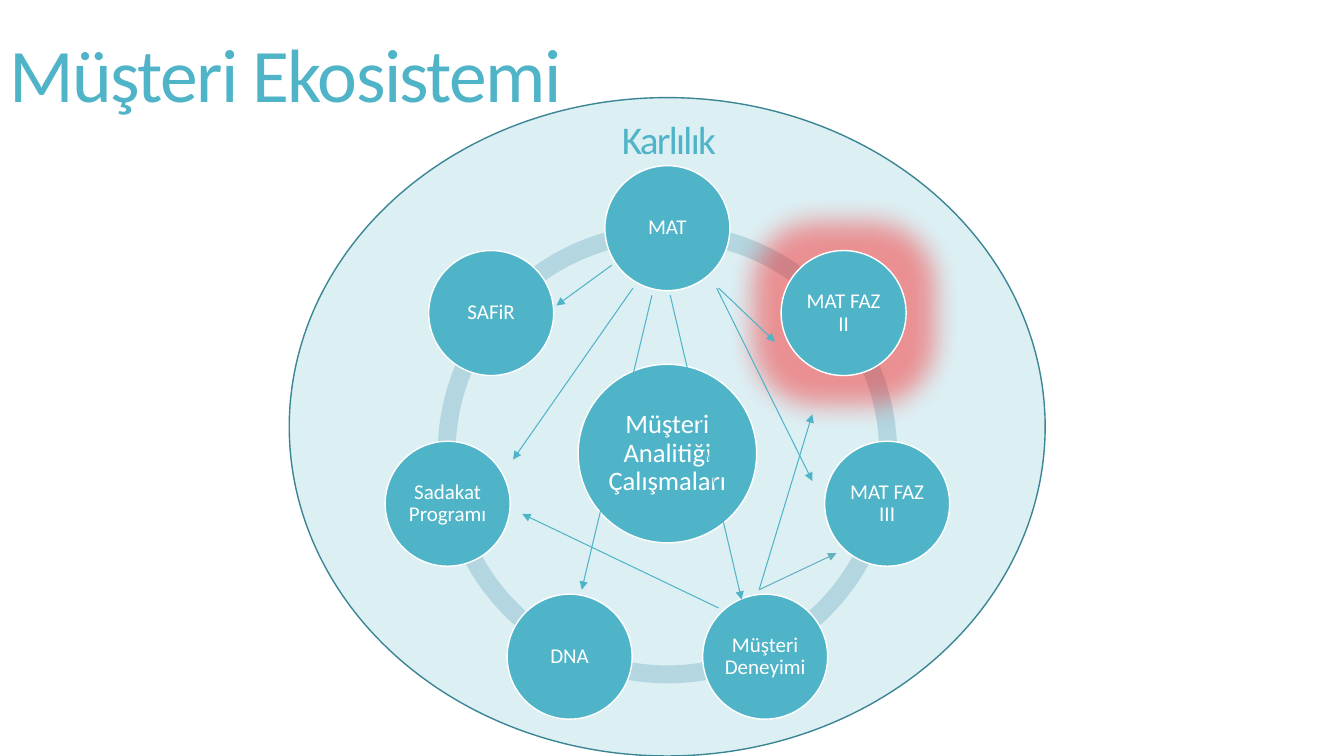
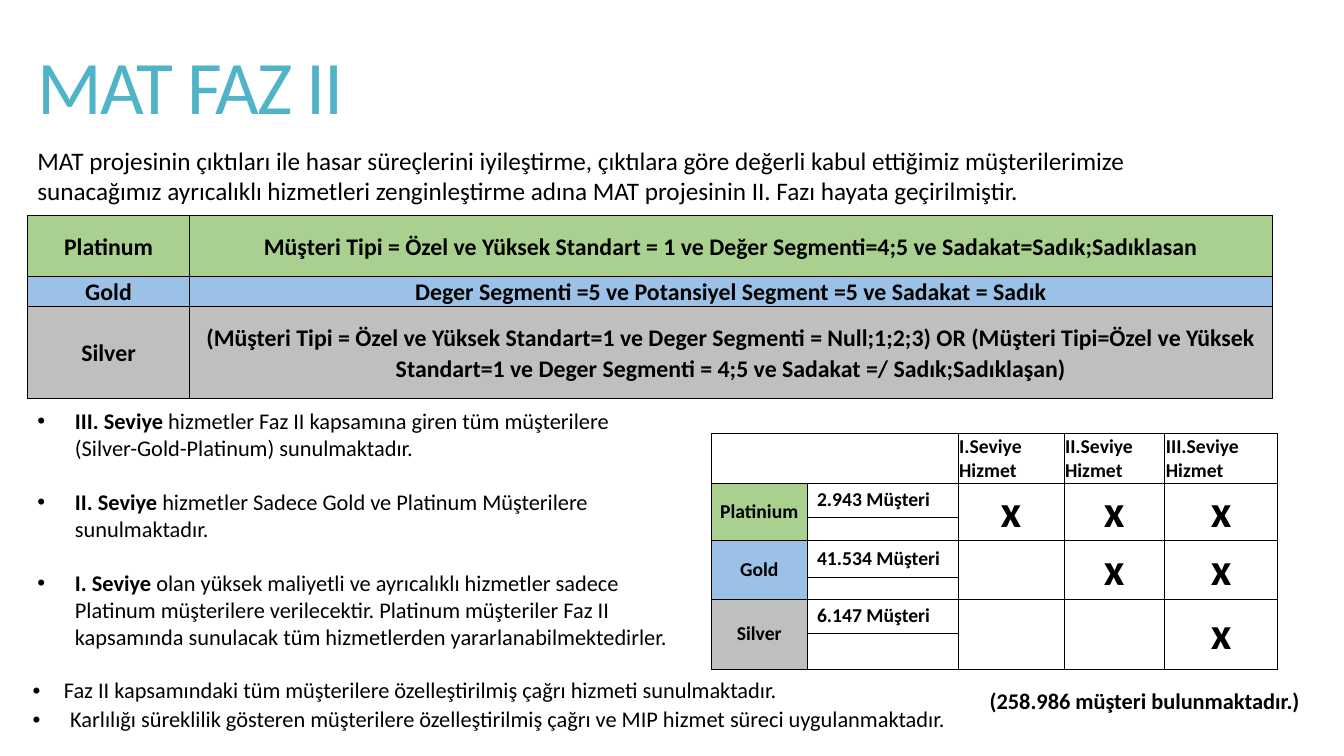
from math import cos, radians, sin

from lxml.etree import SubElement
from pptx import Presentation
from pptx.dml.color import RGBColor
from pptx.enum.shapes import MSO_CONNECTOR, MSO_SHAPE
from pptx.enum.text import MSO_ANCHOR as ANCHOR, PP_ALIGN as ALIGN
from pptx.oxml.ns import qn
from pptx.util import Cm, Pt

COLORS = {
    "teal": "50B4C8",
    "teal_dark": "3B8594",
    "teal_muted": "66B1BD",
    "ring": "B3D6E0",
    "pale": "DCF0F4",
    "white": "FFFFFF",
    "text": "000000",
    "glow": "FF0000",
    "platinum": "A9D08E",
    "gold": "9BC2E6",
    "silver": "BFBFBF",
}
FONT = "Calibri"
LEFT = 0.69
TEXT_WIDTH = 29.92


def rgb(name):
    return RGBColor.from_string(COLORS[name])


class Deck:
    def __init__(self):
        self.prs = Presentation()
        self.prs.slide_width = Cm(33.87)
        self.prs.slide_height = Cm(19.05)
        self.s = None

    def slide(self, title, x, y):
        self.s = self.prs.slides.add_slide(self.prs.slide_layouts[6])
        tf = self.text_box(x, y, TEXT_WIDTH, 4.6)
        tf.vertical_anchor = ANCHOR.MIDDLE
        self.set_text(tf.paragraphs[0], title, 54, "teal", spacing=0.85, tracking=-120)

    def set_text(self, p, text, size, color="text", bold=False, lead="",
                 align=ALIGN.LEFT, spacing=1.0, tracking=None):
        p.text = lead or text
        if lead:
            p.add_run().text = text
        p.alignment = align
        p.line_spacing = spacing
        for i, r in enumerate(p.runs):
            r.font.name = FONT
            r.font.size = Pt(size)
            r.font.color.rgb = rgb(color)
            r.font.bold = bold or (bool(lead) and i == 0)
            if tracking:
                r.font._element.set("spc", str(tracking))

    def bullet(self, p, indent):
        pPr = p._p.get_or_add_pPr()
        pPr.set("marL", str(Cm(indent)))
        pPr.set("indent", str(-Cm(indent)))
        SubElement(pPr, qn("a:buFont"), typeface="Arial")
        SubElement(pPr, qn("a:buChar"), char="•")

    def text_box(self, x, y, w, h):
        tf = self.s.shapes.add_textbox(Cm(x), Cm(y), Cm(w), Cm(h)).text_frame
        tf.word_wrap = True
        return tf

    def shape(self, kind, x, y, w, h, fill, line=None):
        sp = self.s.shapes.add_shape(kind, Cm(x), Cm(y), Cm(w), Cm(h))
        sp.shadow.inherit = False
        sp.fill.solid()
        sp.fill.fore_color.rgb = rgb(fill)
        if line:
            sp.line.color.rgb = rgb(line)
            sp.line.width = Pt(1)
        else:
            sp.line.fill.background()
        return sp

    def circle(self, cx, cy, size, text, font_size):
        sp = self.shape(MSO_SHAPE.OVAL, cx - size / 2, cy - size / 2, size, size,
                        "teal", "white")
        tf = sp.text_frame
        tf.word_wrap = True
        tf.vertical_anchor = ANCHOR.MIDDLE
        tf.margin_left = tf.margin_right = tf.margin_top = tf.margin_bottom = Cm(0.05)
        self.set_text(tf.paragraphs[0], text, font_size, "white", align=ALIGN.CENTER,
                      spacing=0.9)
        return sp

    def glow(self, sp, radius):
        effects = sp._element.spPr.find(qn("a:effectLst"))
        glow = SubElement(effects, qn("a:glow"), rad=str(Pt(radius)))
        color = SubElement(glow, qn("a:srgbClr"), val=COLORS["glow"])
        SubElement(color, qn("a:alpha"), val="40000")

    def arrow(self, x1, y1, x2, y2, color="teal"):
        c = self.s.shapes.add_connector(MSO_CONNECTOR.STRAIGHT, Cm(x1), Cm(y1), Cm(x2), Cm(y2))
        c.line.color.rgb = rgb(color)
        c.line.width = Pt(0.75)
        SubElement(c.line._get_or_add_ln(), qn("a:tailEnd"), type="triangle")
        SubElement(c._element.spPr, qn("a:effectLst"))

    def table(self, x, y, widths, heights, border=None):
        frame = self.s.shapes.add_table(len(heights), len(widths), Cm(x), Cm(y),
                                        Cm(sum(widths)), Cm(sum(heights)))
        table = frame.table
        table.first_row = table.horz_banding = False
        for column, width in zip(table.columns, widths):
            column.width = Cm(width)
        for row, height in zip(table.rows, heights):
            row.height = Cm(height)
        for cell in table.iter_cells():
            cell.margin_left = cell.margin_right = cell.margin_top = cell.margin_bottom = 0
            SubElement(cell.text_frame.paragraphs[0]._p, qn("a:endParaRPr"), sz="600")
            if border:
                self.borders(cell, border)
            cell.fill.background()
        return table

    def borders(self, cell, width):
        tcPr = cell._tc.get_or_add_tcPr()
        for side in ("lnL", "lnR", "lnT", "lnB"):
            ln = SubElement(tcPr, qn("a:" + side), w=str(Pt(width)))
            fill = SubElement(ln, qn("a:solidFill"))
            SubElement(fill, qn("a:srgbClr"), val=COLORS["text"])

    def cell(self, cell, text, size, fill=None, anchor=ANCHOR.MIDDLE, margins=(0.03, 0.03), **style):
        cell.margin_left = cell.margin_right = Cm(margins[0])
        cell.margin_top = cell.margin_bottom = Cm(margins[1])
        cell.vertical_anchor = anchor
        if fill:
            cell.fill.solid()
            cell.fill.fore_color.rgb = rgb(fill)
        p = cell.text_frame.paragraphs[0]
        self.set_text(p, text, size, **style)
        return p


def ecosystem(deck):
    deck.slide("Müşteri Ekosistemi", 0, -0.3)
    deck.shape(MSO_SHAPE.OVAL, 7.29, 2.46, 19.05, 16.59, "pale", "teal_dark")

    cx, cy, ring, orbit = 16.82, 11.43, 11.58, 5.68
    sp = deck.shape(MSO_SHAPE.DONUT, cx - ring / 2, cy - ring / 2, ring, ring, "ring")
    sp.adjustments[0] = 0.039
    deck.circle(cx, cy, 4.5, "Müşteri Analitiği Çalışmaları", 19)

    nodes = ["MAT", "MAT FAZ II", "MAT FAZ III", "Müşteri Deneyimi", "DNA",
             "Sadakat Programı", "SAFiR"]
    for i, name in enumerate(nodes):
        angle = radians(360 * i / len(nodes) - 90)
        sp = deck.circle(cx + orbit * cos(angle), cy + orbit * sin(angle), 3.15, name, 15)
        if name == "MAT FAZ II":
            deck.glow(sp, 40)

    for ends in [
        (19.13, 14.86, 20.47, 10.44),
        (19.13, 14.86, 21.08, 13.94, "teal_muted"),
        (18.06, 7.26, 20.47, 12.12),
        (18.11, 7.26, 19.53, 8.61),
        (16.89, 7.44, 18.69, 15.11),
        (15.42, 6.68, 14.02, 7.7),
        (18.11, 15.32, 13.16, 12.95),
        (16.43, 7.44, 14.66, 14.86),
        (15.95, 7.26, 12.93, 11.58),
    ]:
        deck.arrow(*ends)

    tf = deck.text_box(15.42, 2.77, 3.1, 1.45)
    deck.set_text(tf.paragraphs[0], "Karlılık", 28, "teal", tracking=-120)


def service_levels(deck):
    table = deck.table(17.93, 10.92, [2.41, 3.8, 2.67, 2.54, 2.85],
                       [1.24, 0.86, 0.6, 0.91, 0.56, 0.86, 0.91], border=0.5)
    table.cell(0, 0).merge(table.cell(0, 1))
    for col, level in enumerate(["I", "II", "III"], 2):
        deck.cell(table.cell(0, col), f"{level}.Seviye Hizmet", 14, anchor=ANCHOR.BOTTOM, bold=True)

    tiers = [("Platinium", "platinum", "2.943"), ("Gold", "gold", "41.534"),
             ("Silver", "silver", "6.147")]
    for i, (name, fill, count) in enumerate(tiers):
        row = 1 + 2 * i
        for col in (0, 2, 3, 4):
            table.cell(row, col).merge(table.cell(row + 1, col))
        deck.cell(table.cell(row, 0), name, 14, fill, bold=True, align=ALIGN.CENTER)
        deck.cell(table.cell(row, 1), f"{count} Müşteri", 14, margins=(0.25, 0.13), bold=True)
        for col in range(2 + i, 5):
            deck.cell(table.cell(row, col), "x", 32, bold=True, align=ALIGN.CENTER)


def segments(deck):
    rules = [
        ("Platinum", "Müşteri Tipi = Özel ve Yüksek Standart = 1 ve Değer Segmenti=4;5 "
                     "ve Sadakat=Sadık;Sadıklasan"),
        ("Gold", "Deger Segmenti =5 ve Potansiyel Segment =5 ve Sadakat = Sadık"),
        ("Silver", "(Müşteri Tipi = Özel ve Yüksek Standart=1 ve Deger Segmenti = Null;1;2;3) "
                   "OR (Müşteri Tipi=Özel ve Yüksek Standart=1 ve Deger Segmenti = 4;5 "
                   "ve Sadakat =/ Sadık;Sadıklaşan)"),
    ]
    table = deck.table(LEFT, 5.44, [4.09, 27.28], [1.52, 0.74, 2.31], border=1)
    for row, rule in enumerate(rules):
        for col, text in enumerate(rule):
            deck.cell(table.cell(row, col), text, 17, rule[0].lower(), margins=(0.18, 0),
                      bold=True, align=ALIGN.CENTER, spacing=1.07)


def phase_two(deck):
    deck.slide("MAT FAZ II", LEFT, 0)
    service_levels(deck)
    segments(deck)

    levels = [
        ("III. Seviye", " hizmetler Faz II kapsamına giren tüm müşterilere "
                        "(Silver-Gold-Platinum) sunulmaktadır."),
        ("II. Seviye", " hizmetler Sadece Gold ve Platinum Müşterilere sunulmaktadır."),
        ("I. Seviye", " olan yüksek maliyetli ve ayrıcalıklı hizmetler sadece Platinum "
                      "müşterilere verilecektir. Platinum müşteriler Faz II kapsamında "
                      "sunulacak tüm hizmetlerden yararlanabilmektedirler."),
    ]
    tf = deck.text_box(LEFT, 10.13, 16.46, 6.4)
    for i, (lead, text) in enumerate(levels):
        p = tf.add_paragraph() if i else tf.paragraphs[0]
        deck.set_text(p, text, 16, lead=lead)
        p.space_before = Pt(19.5 if i else 0)
        deck.bullet(p, 0.95)

    notes = [
        ("Faz II kapsamındaki tüm müşterilere özelleştirilmiş çağrı hizmeti sunulmaktadır.", 0.79),
        ("Karlılığı süreklilik gösteren müşterilere özelleştirilmiş çağrı ve MIP hizmet "
         "süreci uygulanmaktadır.", 0.95),
    ]
    table = deck.table(LEFT, 17.02, [23.88], [0.71] * len(notes))
    for row, (text, indent) in enumerate(notes):
        p = deck.cell(table.cell(row, 0), text, 16, anchor=ANCHOR.BOTTOM, margins=(0.13, 0),
                      spacing=1.07)
        deck.bullet(p, indent)

    table = deck.table(24.69, 17.2, [9.17], [0.94])
    deck.cell(table.cell(0, 0), "(258.986 müşteri bulunmaktadır.)", 16, margins=(0.25, 0.13),
              bold=True)

    tf = deck.text_box(LEFT, 3.53, TEXT_WIDTH, 1.8)
    deck.set_text(tf.paragraphs[0],
                  "MAT projesinin çıktıları ile hasar süreçlerini iyileştirme, çıktılara göre "
                  "değerli kabul ettiğimiz müşterilerimize sunacağımız ayrıcalıklı hizmetleri "
                  "zenginleştirme adına MAT projesinin II. Fazı hayata geçirilmiştir.", 18)


def main():
    deck = Deck()
    ecosystem(deck)
    phase_two(deck)
    deck.prs.save("out.pptx")


if __name__ == "__main__":
    main()
